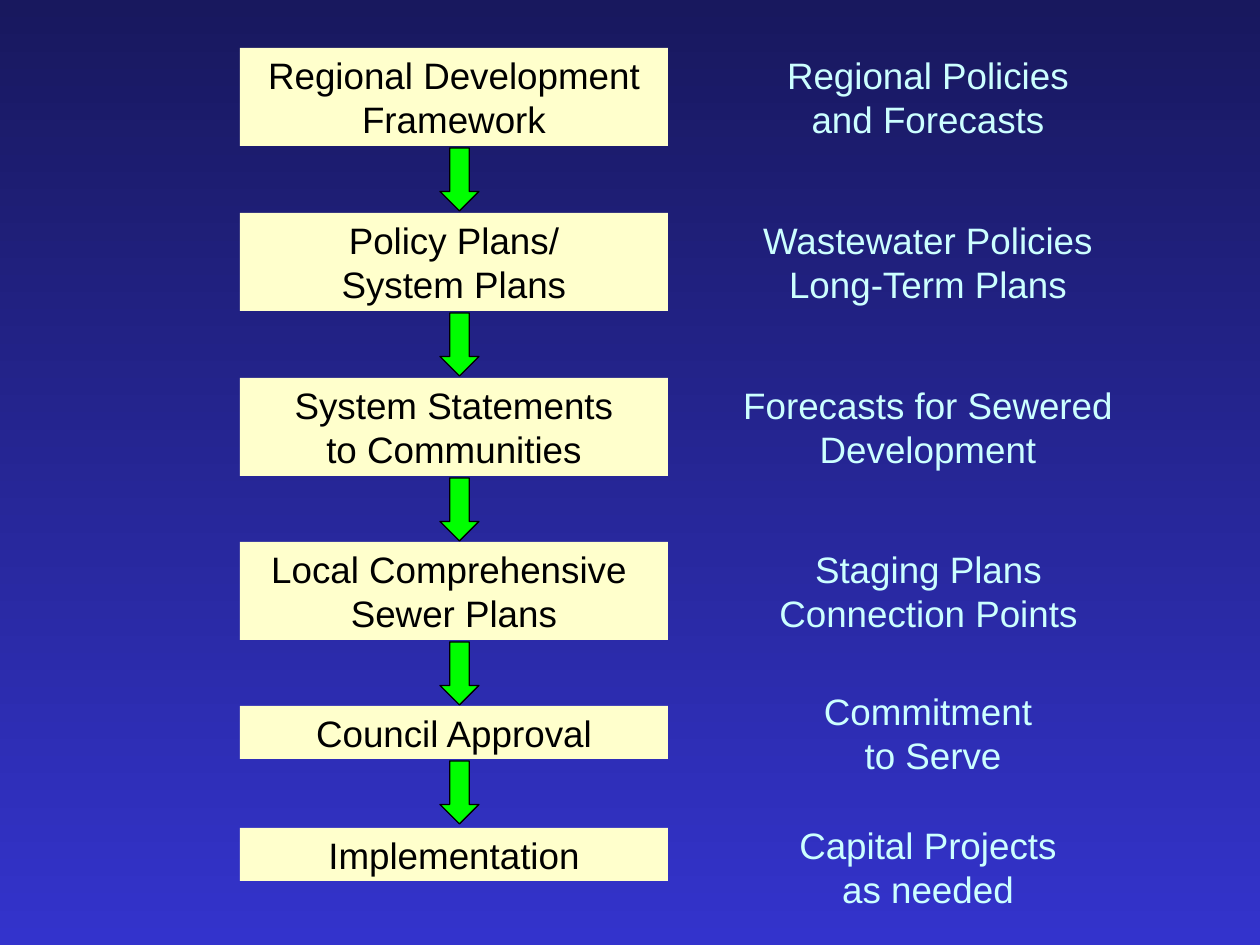
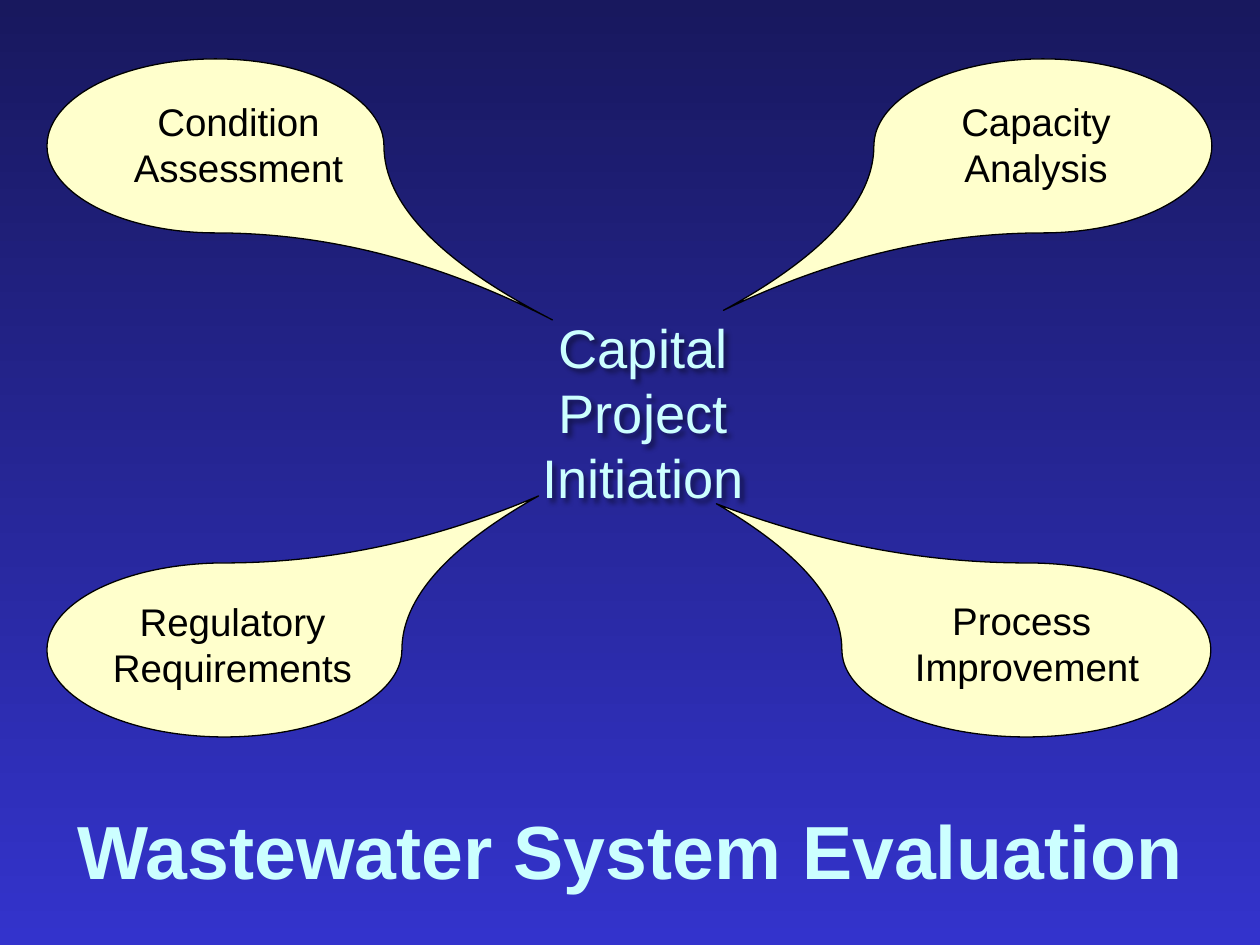
from lxml import etree
from pptx import Presentation
from pptx.dml.color import RGBColor
from pptx.enum.shapes import MSO_SHAPE
from pptx.enum.text import MSO_ANCHOR, MSO_AUTO_SIZE, PP_ALIGN
from pptx.oxml.ns import qn
from pptx.util import Pt

RECTANGLE = MSO_SHAPE.RECTANGLE
DOWN_ARROW = MSO_SHAPE.DOWN_ARROW
TEARDROP = MSO_SHAPE.TEAR
MIDDLE = MSO_ANCHOR.MIDDLE
NO_AUTOFIT = MSO_AUTO_SIZE.NONE
CENTER = PP_ALIGN.CENTER

PX = 914400 // 126
SLIDE_W, SLIDE_H = 1260, 945
FONT = "Arial"
NIGHT, BLUE = "18185E", "3333CC"
CREAM, ICE, GREEN, BLACK = "FFFFCC", "CCFFFF", "00FF00", "000000"

STEP_LEFT, STEP_W = 240, 428
NOTE_CENTER, NOTE_H = 928, 98
ARROW_LEFT, ARROW_W, ARROW_H, ARROW_GAP = 440, 39, 63, 2

PLANNING_STEPS = [
    (48, 98, ["Regional Development Framework"],
     48, 306, ["Regional Policies and Forecasts"]),
    (213, 98, ["Policy Plans/", "System Plans"],
     213, 354, ["Wastewater Policies Long-Term Plans"]),
    (378, 98, ["System Statements", "to Communities"],
     378, 388, ["Forecasts for Sewered Development"]),
    (542, 98, ["Local Comprehensive ", "Sewer Plans"],
     542, 379, ["Staging Plans Connection Points"]),
    (706, 53, ["Council Approval"],
     684, 364, ["Commitment", " to Serve"]),
    (828, 53, ["Implementation"],
     818, 364, ["Capital Projects", "as needed"]),
]

DRIVERS = [
    ((47, 59, 337, 174), 2.0, ["flipV"],
     (107, 91, 263, 106), ["Condition Assessment"]),
    ((874, 59, 338, 174), 1.89, ["flipH", "flipV"],
     (919, 91, 234, 106), ["Capacity Analysis"]),
    ((47, 563, 355, 174), 1.77, [],
     (97, 591, 271, 106), ["Regulatory Requirements"]),
    ((842, 563, 369, 174), 1.68, ["flipH"],
     (892, 590, 270, 106), ["Process ", "Improvement"]),
]


def rgb(hex_color):
    return RGBColor.from_string(hex_color)


def emu(box):
    return [length * PX for length in box]


def set_background(master):
    fill = master.background.fill
    fill.gradient()
    fill.gradient_angle = 270
    for stop, position, color in zip(fill.gradient_stops, (0, 1), (NIGHT, BLUE)):
        stop.position = position
        stop.color.rgb = rgb(color)


def write(shape, lines, size, color, bold=False):
    frame = shape.text_frame
    frame.word_wrap = True
    frame.auto_size = NO_AUTOFIT
    frame.vertical_anchor = MIDDLE
    frame.margin_left = frame.margin_right = 9 * PX
    frame.margin_top = frame.margin_bottom = 4 * PX
    for index, line in enumerate(lines):
        paragraph = frame.add_paragraph() if index else frame.paragraphs[0]
        paragraph.alignment = CENTER
        run = paragraph.add_run()
        run.text = line
        run.font.name = FONT
        run.font.size = Pt(size)
        run.font.bold = bold
        run.font.color.rgb = rgb(color)


def add_label(slide, box, lines, size, color):
    label = slide.shapes.add_textbox(*emu(box))
    write(label, lines, size, color)
    return label


def add_figure(slide, preset, box, fill, outline=None):
    figure = slide.shapes.add_shape(preset, *emu(box))
    figure.shadow.inherit = False
    figure.fill.solid()
    figure.fill.fore_color.rgb = rgb(fill)
    if outline:
        figure.line.color.rgb = rgb(outline)
        figure.line.width = Pt(0.75)
    else:
        figure.line.fill.background()
    return figure


def add_title(slide, box, text):
    title = slide.shapes.title
    title.left, title.top, title.width, title.height = emu(box)
    write(title, [text], 43, ICE, bold=True)


def add_bubble(slide, box, tip, flips):
    bubble = add_figure(slide, TEARDROP, box, CREAM, BLACK)
    bubble.adjustments[0] = tip
    for flip in flips:
        bubble._element.spPr.find(qn("a:xfrm")).set(flip, "1")


def cast_shadow(label):
    effects = etree.SubElement(label._element.spPr, qn("a:effectLst"))
    shadow = etree.SubElement(effects, qn("a:outerShdw"), blurRad="38100",
                              dist="38100", dir="2700000", algn="tl")
    color = etree.SubElement(shadow, qn("a:srgbClr"), val=BLACK)
    etree.SubElement(color, qn("a:alpha"), val="43000")


def build_planning_slide(deck):
    slide = deck.slides.add_slide(deck.slide_layouts.get_by_name("Blank"))
    for top, height, step, note_top, note_w, note in PLANNING_STEPS:
        step_box = add_figure(slide, RECTANGLE,
                              (STEP_LEFT, top, STEP_W, height), CREAM)
        write(step_box, step, 21, BLACK)
        add_label(slide, (NOTE_CENTER - note_w // 2, note_top, note_w, NOTE_H),
                  note, 21, ICE)
    for top, height, *_ in PLANNING_STEPS[:-1]:
        add_figure(slide, DOWN_ARROW,
                   (ARROW_LEFT, top + height + ARROW_GAP, ARROW_W, ARROW_H),
                   GREEN, BLACK)


def build_evaluation_slide(deck):
    slide = deck.slides.add_slide(deck.slide_layouts.get_by_name("Title Only"))
    add_title(slide, (0, 798, SLIDE_W, 102), "Wastewater System Evaluation")
    for bubble_box, tip, flips, label_box, driver in DRIVERS:
        add_bubble(slide, bubble_box, tip, flips)
        add_label(slide, label_box, driver, 22, BLACK)
    goal = add_label(slide, (522, 306, 242, 212),
                     ["Capital", "Project Initiation"], 31, ICE)
    cast_shadow(goal)


def main():
    deck = Presentation()
    deck.slide_width, deck.slide_height = emu((SLIDE_W, SLIDE_H))
    set_background(deck.slide_master)
    build_planning_slide(deck)
    build_evaluation_slide(deck)
    deck.save("out.pptx")


if __name__ == "__main__":
    main()
